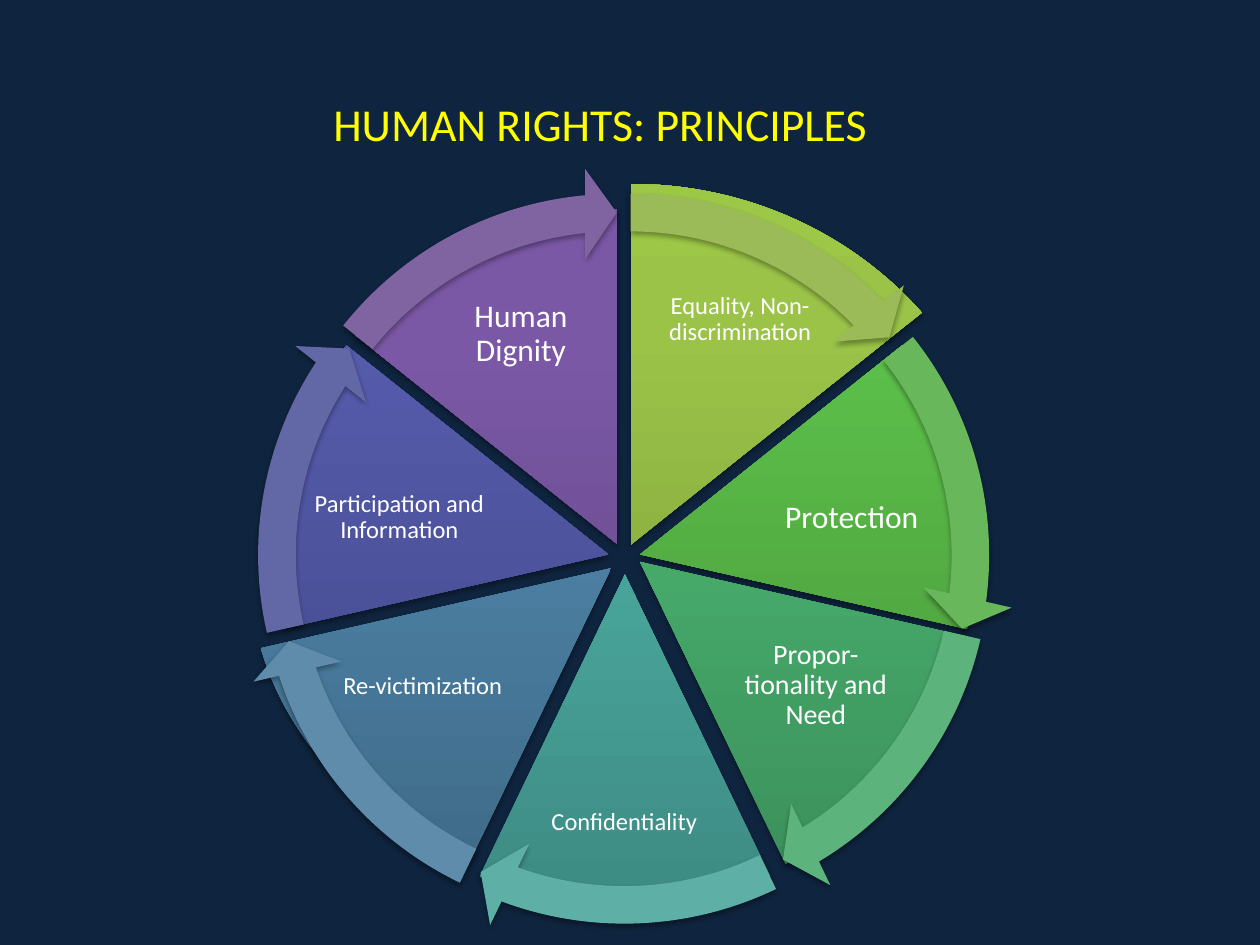
"""Build a slide with a seven-part wheel of human rights principles."""
from lxml import etree
from pptx import Presentation
from pptx.dml.color import RGBColor
from pptx.enum.shapes import MSO_SHAPE
from pptx.enum.text import MSO_ANCHOR, MSO_AUTO_SIZE, PP_ALIGN
from pptx.oxml.ns import qn
from pptx.util import Inches, Pt

PIE, ARROW = MSO_SHAPE.PIE, MSO_SHAPE.CIRCULAR_ARROW
MIDDLE, CENTER = MSO_ANCHOR.MIDDLE, PP_ALIGN.CENTER
NAVY = RGBColor(0x0F, 0x24, 0x3E)
YELLOW = RGBColor(0xFF, 0xFF, 0x00)
WHITE = RGBColor(0xFF, 0xFF, 0xFF)
FONT = "Calibri"

TITLE = "HUMAN RIGHTS: PRINCIPLES"
TITLE_BOX = (0.47, 0.7, 8.59, 0.55)

PRINCIPLES = [
    {"label": "Equality, Non-discrimination", "size": 14, "inset": 0.02,
     "label_box": (5.16, 1.99, 1.43, 1.09), "wedge_box": (2, 1.46, 6.02, 5.72),
     "shades": ("779737", "9BC348", "9DC746"), "arrow_at": (2.02, 1.33), "arrow": "9BBB59"},
    {"label": "Protection", "size": 18, "inset": 0.03,
     "label_box": (6.03, 3.67, 1.46, 0.89), "wedge_box": (2.42, 1.74, 5.32, 5.32),
     "shades": ("479339", "5CBF4A", "5BC249"), "arrow_at": (2.09, 1.42), "arrow": "69B75B"},
    {"label": "Propor-tionality and Need", "size": 16, "inset": 0.02,
     "label_box": (5.84, 4.95, 1.27, 0.98), "wedge_box": (2.42, 1.8, 5.32, 5.32),
     "shades": ("3B8F5A", "4DBA75", "4BBD75"), "arrow_at": (2.09, 1.47), "arrow": "5CB37C"},
    {"label": "Confidentiality", "size": 14, "inset": 0.02,
     "label_box": (4.34, 6.08, 1.23, 0.89), "wedge_box": (2.3, 1.9, 5.32, 5.32),
     "shades": ("3D8B83", "50B5AA", "4EB8AC"), "arrow_at": (1.97, 1.57), "arrow": "5EAFA6"},
    {"label": "Re-victimization", "size": 14, "inset": 0.02,
     "label_box": (2.67, 4.98, 1.37, 0.94), "wedge_box": (1.98, 1.97, 5.74, 5.08),
     "shades": ("3F6A88", "528AB0", "518BB3"), "arrow_at": (1.87, 1.52), "arrow": "608CAB"},
    {"label": "Participation and Information", "size": 14, "inset": 0.02,
     "label_box": (2.45, 3.66, 1.44, 0.9), "wedge_box": (2.2, 1.69, 5.26, 5.42),
     "shades": ("414684", "555BAB", "545AAE"), "arrow_at": (1.84, 1.42), "arrow": "6267A6"},
    {"label": "Human Dignity", "size": 18, "inset": 0.03,
     "label_box": (3.5, 2.15, 1.27, 1.01), "wedge_box": (2.24, 1.66, 5.32, 5.32),
     "shades": ("5F4480", "7B58A6", "7C57A8"), "arrow_at": (1.91, 1.33), "arrow": "8064A2"},
]

# Angles are in units of 5/3 degree, so a full turn is 216.
FULL_TURN = 216
TOP = 162
STEP = FULL_TURN / len(PRINCIPLES)
ARROW_SWEEP = 27.58
ARROW_SIZE = 5.97
SHADE_STOPS = (0, 80000, 100000)


def add_element(parent, tag, **attributes):
    return etree.SubElement(parent, qn(tag), attributes)


def set_format(target, values):
    for name, value in values.items():
        setattr(target, name, value)


def write_text(frame, text, size, color, inset, spacing):
    set_format(frame, {
        "text": text, "word_wrap": True, "auto_size": MSO_AUTO_SIZE.NONE,
        "vertical_anchor": MIDDLE,
        "margin_left": Inches(inset), "margin_right": Inches(inset),
        "margin_top": Inches(inset), "margin_bottom": Inches(inset)})
    paragraph = frame.paragraphs[0]
    set_format(paragraph, {"alignment": CENTER, "line_spacing": spacing})
    set_format(paragraph.font, {"size": Pt(size), "name": FONT})
    font = paragraph.runs[0].font
    set_format(font, {"size": Pt(size), "name": FONT})
    font.color.rgb = color


def add_wheel_part(slide, preset, box, angles):
    part = slide.shapes.add_shape(preset, *map(Inches, box))
    for index, angle in enumerate(angles):
        part.adjustments[index] = angle
    part.line.fill.background()
    part.shadow.inherit = False
    effects = part.element.spPr.find(qn("a:effectLst"))
    shadow = add_element(effects, "a:outerShdw", blurRad="40000", dist="23000",
                         dir="5400000", rotWithShape="0")
    black = add_element(shadow, "a:srgbClr", val="000000")
    add_element(black, "a:alpha", val="35000")
    return part


def shade(wedge, shades):
    wedge.fill.gradient()
    wedge.fill.gradient_angle = 90
    stops = wedge.element.spPr.find(qn("a:gradFill")).find(qn("a:gsLst"))
    for old_stop in list(stops):
        stops.remove(old_stop)
    for position, color in zip(SHADE_STOPS, shades):
        stop = add_element(stops, "a:gs", pos=str(position))
        add_element(stop, "a:srgbClr", val=color)


def main():
    deck = Presentation()
    deck.slide_width, deck.slide_height = Inches(10), Inches(7.5)
    slide = deck.slides.add_slide(deck.slide_layouts[0])
    slide.background.fill.solid()
    slide.background.fill.fore_color.rgb = NAVY
    subtitle = slide.placeholders[1].element
    subtitle.getparent().remove(subtitle)

    starts = [(TOP + i * STEP) % FULL_TURN for i in range(len(PRINCIPLES))]
    for principle, start, end in zip(PRINCIPLES, starts, starts[1:] + starts[:1]):
        wedge = add_wheel_part(slide, PIE, principle["wedge_box"], (start, end))
        shade(wedge, principle["shades"])
        label = slide.shapes.add_textbox(*map(Inches, principle["label_box"]))
        write_text(label.text_frame, principle["label"], principle["size"], WHITE,
                   principle["inset"], 0.9)

    for principle, start in zip(PRINCIPLES, starts):
        tip = (start + ARROW_SWEEP) % FULL_TURN
        arrow = add_wheel_part(slide, ARROW, (*principle["arrow_at"], ARROW_SIZE, ARROW_SIZE),
                               (0.05, 3.28, tip, start, 0.06))
        arrow.fill.solid()
        arrow.fill.fore_color.rgb = RGBColor.from_string(principle["arrow"])

    title = slide.shapes.title
    set_format(title, dict(zip(("left", "top", "width", "height"), map(Inches, TITLE_BOX))))
    write_text(title.text_frame, TITLE, 26.1, YELLOW, 0.05, 1.0)
    deck.save("out.pptx")


if __name__ == "__main__":
    main()
